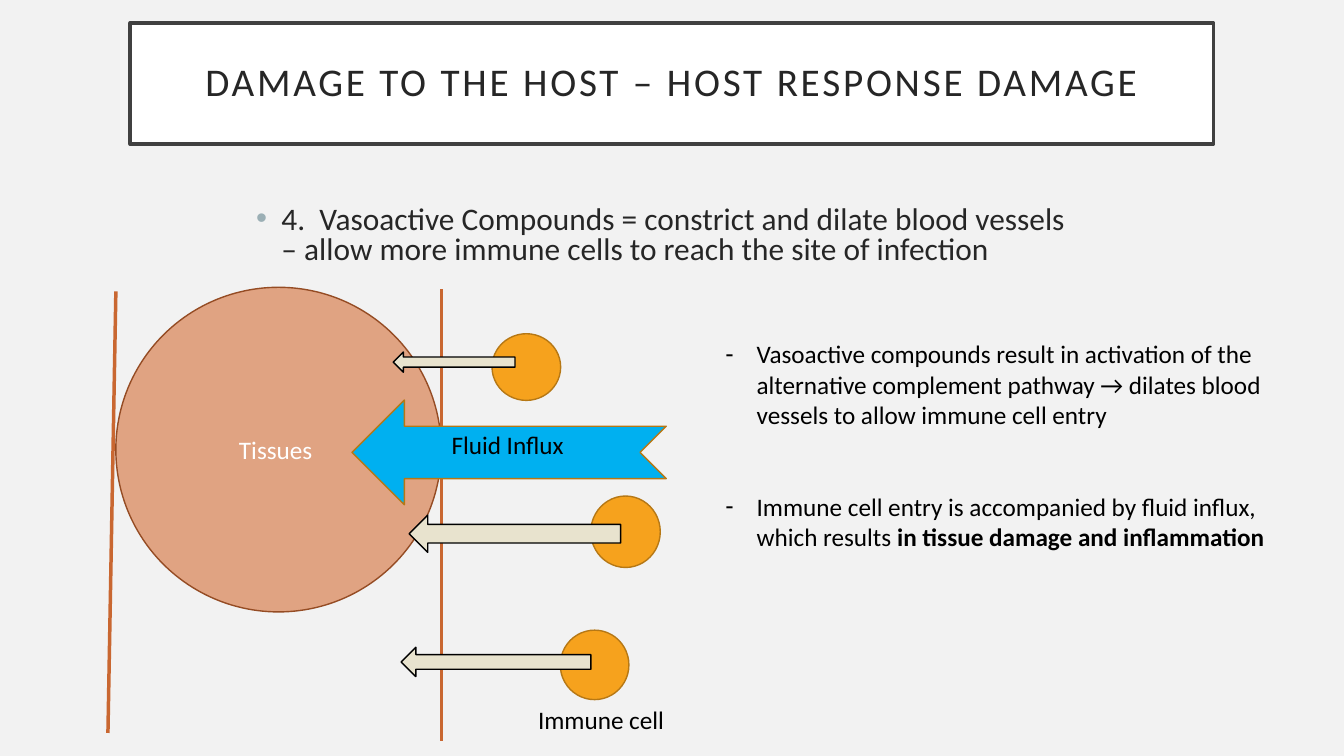
import pptx
import pptx.util
import pptx.dml.color
import pptx.enum.shapes
import pptx.enum.text
import pptx.oxml.ns
from lxml import etree

Cm, Pt = pptx.util.Cm, pptx.util.Pt
RGB = pptx.dml.color.RGBColor
SHAPE = pptx.enum.shapes.MSO_SHAPE
ALIGN = pptx.enum.text.PP_ALIGN
ANCHOR = pptx.enum.text.MSO_ANCHOR
qn = pptx.oxml.ns.qn

BACKGROUND = RGB(0xF2, 0xF2, 0xF2)
WHITE = RGB(0xFF, 0xFF, 0xFF)
BLACK = RGB(0, 0, 0)
FRAME = RGB(0x40, 0x40, 0x40)
INK = RGB(0x26, 0x26, 0x26)
BULLET = RGB(0x9B, 0xAF, 0xB5)
VESSEL = RGB(0xC9, 0x67, 0x31)
TISSUE = RGB(0xE0, 0xA3, 0x82)
TISSUE_EDGE = RGB(0x95, 0x4C, 0x24)
FLUID = RGB(0x00, 0xB0, 0xF0)
CELL = RGB(0xF6, 0xA2, 0x1D)
CELL_EDGE = RGB(0xB6, 0x78, 0x15)
ARROW = RGB(0xE8, 0xE3, 0xCE)


def add_text(p, text, size=18, color=BLACK, bold=None, align=None, spacing=None):
    """Append a formatted run to a paragraph."""
    r = p.add_run()
    r.text = text
    r.font.name = "Calibri"
    r.font.size = Pt(size)
    r.font.color.rgb = color
    r.font.bold = bold
    if align is not None:
        p.alignment = align
    if spacing is not None:
        r._r.get_or_add_rPr().set("spc", str(spacing * 100))


def set_bullet(p, char, indent, color=None):
    """Give a paragraph a hanging bullet."""
    pPr = p._p.get_or_add_pPr()
    pPr.set("marL", str(Cm(indent)))
    pPr.set("indent", str(-Cm(indent)))
    if color is not None:
        clr = etree.SubElement(pPr, qn("a:buClr"))
        etree.SubElement(clr, qn("a:srgbClr")).set("val", str(color))
    etree.SubElement(pPr, qn("a:buFont")).set("typeface", "Arial")
    etree.SubElement(pPr, qn("a:buChar")).set("char", char)


def place(sp, left, top, width, height):
    """Move and size a shape in centimetres."""
    sp.left, sp.top, sp.width, sp.height = map(Cm, (left, top, width, height))


def add_box(s, left, top, width, height):
    """Add a wrapping text box and return its text frame."""
    tf = s.shapes.add_textbox(*map(Cm, (left, top, width, height))).text_frame
    tf.word_wrap = True
    return tf


def add_figure(s, kind, left, top, width, height, fill, edge):
    """Add a filled preset shape with a thin edge."""
    sp = s.shapes.add_shape(kind, *map(Cm, (left, top, width, height)))
    sp.shadow.inherit = False
    sp.fill.solid()
    sp.fill.fore_color.rgb = fill
    sp.line.color.rgb = edge
    sp.line.width = Pt(1)
    return sp


def add_vessel_wall(s, x1, y1, x2, y2):
    """Add a straight vessel wall."""
    line = s.shapes.add_connector(
        pptx.enum.shapes.MSO_CONNECTOR.STRAIGHT, *map(Cm, (x1, y1, x2, y2)))
    line.line.color.rgb = VESSEL
    line.line.width = Pt(2.5)
    etree.SubElement(line._element.spPr, qn("a:effectLst"))


def fill_title(s, left, top, width, height):
    """Write the framed title."""
    sp = s.shapes.title
    place(sp, left, top, width, height)
    sp.fill.solid()
    sp.fill.fore_color.rgb = WHITE
    sp.line.color.rgb = FRAME
    sp.line.width = Pt(2.5)
    tf = sp.text_frame
    tf.auto_size = pptx.enum.text.MSO_AUTO_SIZE.NONE
    tf.vertical_anchor = ANCHOR.MIDDLE
    tf.margin_left = tf.margin_right = tf.margin_top = tf.margin_bottom = Cm(0.51)
    p = tf.paragraphs[0]
    p.line_spacing = 0.9
    add_text(p, "DAMAGE TO THE HOST – HOST RESPONSE DAMAGE",
             size=28, color=INK, align=ALIGN.CENTER, spacing=2)


def fill_body(s, left, top, width, height):
    """Write the main bullet."""
    sp = s.placeholders[1]
    place(sp, left, top, width, height)
    tf = sp.text_frame
    tf.auto_size = pptx.enum.text.MSO_AUTO_SIZE.NONE
    p = tf.paragraphs[0]
    p.line_spacing = 0.8
    p.space_before = Pt(10)
    set_bullet(p, "•", 0.64, BULLET)
    add_text(p, "4.  Vasoactive Compounds = constrict and dilate blood vessels "
                "– allow more immune cells to reach the site of infection",
             size=22.4, color=INK)


def draw_diagram(s, left, top):
    """Draw the tissue, vessel walls, fluid influx and immune cells."""
    add_vessel_wall(s, left + 0.2, top + 0.1, left, top + 11.23)
    add_vessel_wall(s, left + 8.41, top + 0.05, left + 8.41, top + 11.43)

    tissue = add_figure(s, SHAPE.OVAL, left + 0.2, top, 8.2, 8.18, TISSUE, TISSUE_EDGE)
    tissue.text_frame.vertical_anchor = ANCHOR.MIDDLE
    add_text(tissue.text_frame.paragraphs[0], "Tissues ", color=WHITE, align=ALIGN.CENTER)

    influx = add_figure(s, SHAPE.NOTCHED_RIGHT_ARROW, left + 6.15, top + 2.84,
                        7.92, 2.64, FLUID, CELL_EDGE)
    influx.rotation = 180

    cells = [
        ((9.68, 1.17, 1.73, 1.68), (7.19, 1.63, 3.07, 0.51)),
        ((12.17, 5.26, 1.75, 1.8), (7.39 + 0.2, 5.74, 5.33, 0.94)),
        ((11.4, 8.64, 1.73, 1.75), (7.39, 9.07, 4.78, 0.74)),
    ]
    for (cx, cy, cw, ch), (ax, ay, aw, ah) in cells:
        add_figure(s, SHAPE.OVAL, left + cx, top + cy, cw, ch, CELL, CELL_EDGE)
        add_figure(s, SHAPE.LEFT_ARROW, left + ax, top + ay, aw, ah, ARROW, BLACK)

    for text, x, y, width in [("Fluid Influx", 8.41, 3.45, 4.34),
                              ("Immune cell", 10.59, 10.39, 5.21)]:
        tf = add_box(s, left + x, top + y, width, 1.02)
        add_text(tf.paragraphs[0], text)


def write_notes(s, left, top, width, height):
    """Write the two dashed explanations."""
    tf = add_box(s, left, top, width, height)
    p = tf.paragraphs[0]
    set_bullet(p, "-", 0.79)
    add_text(p, "Vasoactive compounds result in activation of the alternative "
                "complement pathway → dilates blood vessels to allow immune cell entry")
    p = tf.add_paragraph()
    p.space_before = Pt(44)
    set_bullet(p, "-", 0.79)
    add_text(p, "Immune cell entry is accompanied by fluid influx, which results ")
    add_text(p, "in tissue damage and inflammation", bold=True)


def main():
    """Build and save the slide."""
    prs = pptx.Presentation()
    prs.slide_width, prs.slide_height = Cm(33.87), Cm(19.05)
    s = prs.slides.add_slide(prs.slide_layouts[1])
    s.background.fill.solid()
    s.background.fill.fore_color.rgb = BACKGROUND
    fill_title(s, 3.28, 0.58, 27.3, 3.05)
    fill_body(s, 6.2, 5.08, 21.16, 2.21)
    draw_diagram(s, 2.72, 7.24)
    write_notes(s, 18.03, 8.41, 14.3, 6.4)
    prs.save("out.pptx")


if __name__ == "__main__":
    main()
